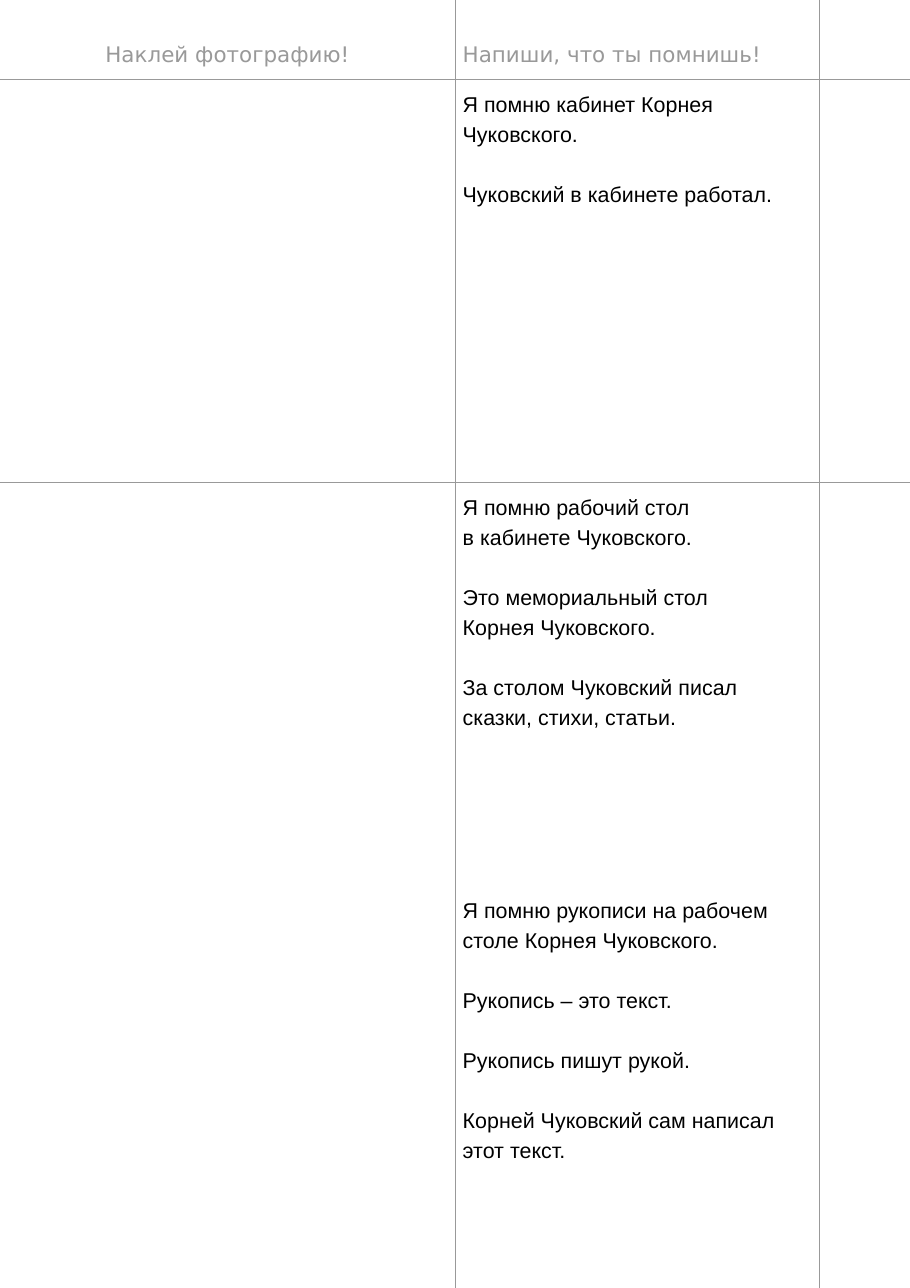
from lxml import etree
from pptx import Presentation
from pptx import util as u
from pptx.dml.color import RGBColor
from pptx.enum import text
from pptx.oxml.ns import qn

WIDTH, HEIGHT = 8.26, 11.69
COLUMN_SHARES = [0.5, 0.4, 0.1]
HEADER_HEIGHT, ENTRY_HEIGHT = 0.72, 3.66
MARGIN, HEADER_MARGIN = 0.07, 0.34
LINE_HEIGHT = u.Pt(19.6)
GREY, BLACK, WHITE = "999999", "000000", "FFFFFF"
RULED_ROWS = (0, 1)

HEADERS = ["Наклей фотографию!", "Напиши, что ты помнишь!"]
MEMORIES = [
    [["Я помню кабинет Корнея Чуковского."],
     ["Чуковский в кабинете работал."]],
    [["Я помню рабочий стол", "в кабинете Чуковского."],
     ["Это мемориальный стол", "Корнея Чуковского."],
     ["За столом Чуковский писал сказки, стихи, статьи."]],
    [["Я помню рукописи на рабочем столе Корнея Чуковского."],
     ["Рукопись – это текст."],
     ["Рукопись пишут рукой."],
     ["Корней Чуковский сам написал этот текст."]],
]


def color(value):
    return RGBColor.from_string(value)


def set_border(cell, sides):
    properties = cell._tc.get_or_add_tcPr()
    for place, side in enumerate("LRTB"):
        line = etree.Element(qn(f"a:ln{side}"))
        if side in sides:
            line.set("w", str(u.Pt(0.53)))
            fill = etree.SubElement(line, qn("a:solidFill"))
            etree.SubElement(fill, qn("a:srgbClr")).set("val", GREY)
        else:
            line.set("w", "0")
            etree.SubElement(line, qn("a:noFill"))
        properties.insert(place, line)


def write(cell, groups, font, shade, align=text.PP_ALIGN.LEFT):
    frame = cell.text_frame
    lines = [(number, group, line) for group, block in enumerate(groups)
             for number, line in enumerate(block)]
    for number, group, line in lines:
        first = number == group == 0
        para = frame.paragraphs[0] if first else frame.add_paragraph()
        para.alignment = align
        para.line_spacing = LINE_HEIGHT
        if group and number == 0:
            para.space_before = LINE_HEIGHT
        span = para.add_run()
        span.text = line
        span.font.name = font
        span.font.size = u.Pt(14)
        span.font.color.rgb = color(shade)


deck = Presentation()
deck.slide_width, deck.slide_height = u.Inches(WIDTH), u.Inches(HEIGHT)
page = deck.slides.add_slide(deck.slide_layouts[6])

heights = [HEADER_HEIGHT] + [ENTRY_HEIGHT] * len(MEMORIES)
diary = page.shapes.add_table(len(heights), len(COLUMN_SHARES), 0, 0,
                              u.Inches(WIDTH), u.Inches(sum(heights))).table
diary.first_row = diary.horz_banding = False
for column, share in zip(diary.columns, COLUMN_SHARES):
    column.width = u.Inches(WIDTH * share)

for r, height in enumerate(heights):
    diary.rows[r].height = u.Inches(height)
    for c in range(len(COLUMN_SHARES)):
        cell = diary.cell(r, c)
        cell.fill.solid()
        cell.fill.fore_color.rgb = color(WHITE)
        cell.margin_left = cell.margin_right = cell.margin_bottom = u.Inches(MARGIN)
        cell.margin_top = u.Inches(MARGIN if r else HEADER_MARGIN)
        sides = ("L" if c else "") + ("R" if c < len(COLUMN_SHARES) - 1 else "")
        sides += ("B" if r in RULED_ROWS else "") + ("T" if r - 1 in RULED_ROWS else "")
        set_border(cell, sides)

for c, (header, align) in enumerate(zip(HEADERS, (text.PP_ALIGN.CENTER, text.PP_ALIGN.LEFT))):
    write(diary.cell(0, c), [[header]], "DejaVu Sans", GREY, align)
for r, memory in enumerate(MEMORIES, 1):
    write(diary.cell(r, 1), memory, "Arial", BLACK)

deck.save("out.pptx")
